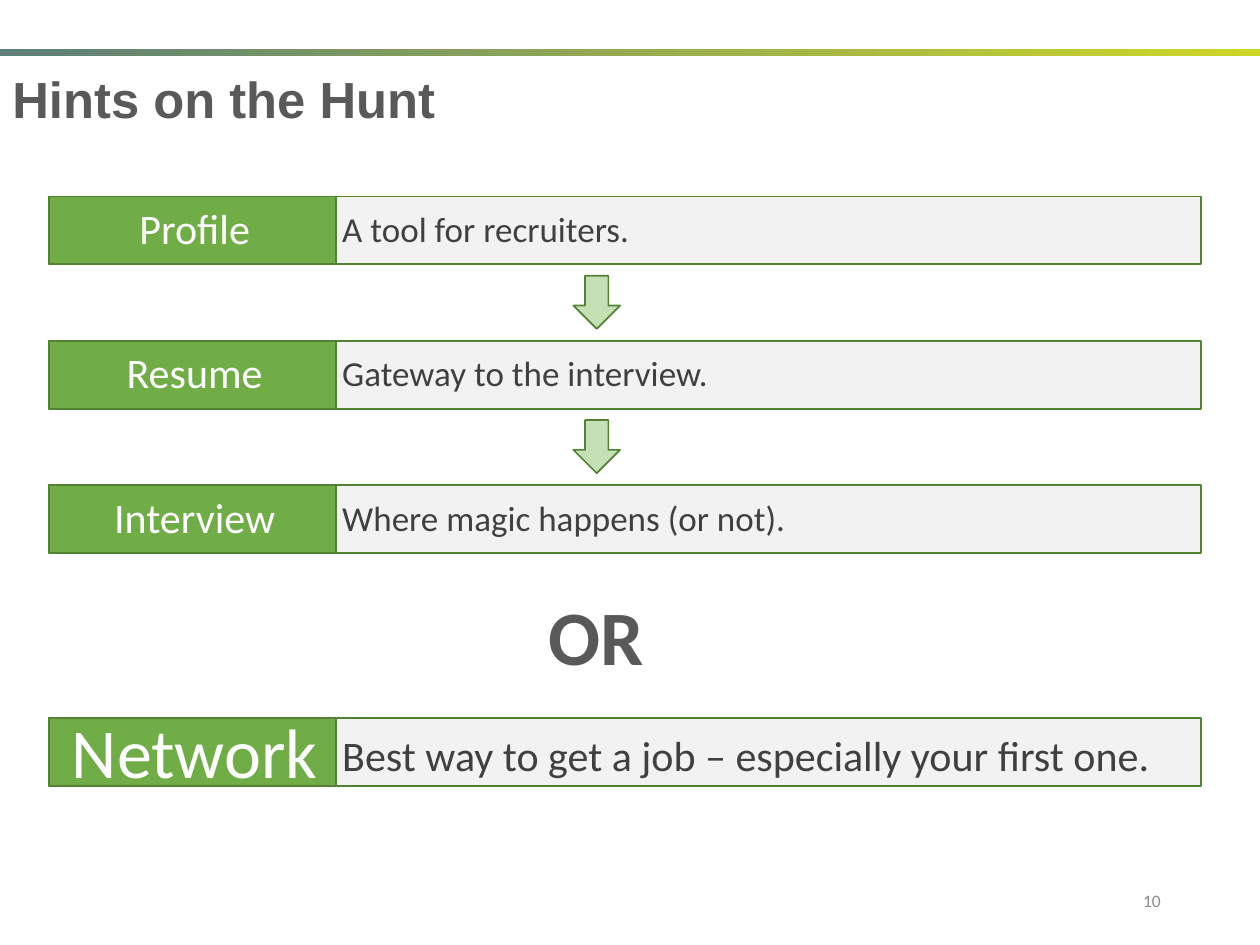
from dataclasses import dataclass

from pptx import Presentation
from pptx import util as u
from pptx.dml import color
from pptx.enum import shapes, text

Cm, Pt = u.Cm, u.Pt
RGB = color.RGBColor.from_string
KIND = shapes.MSO_SHAPE
SIDE = text.PP_ALIGN
MID = text.MSO_ANCHOR.MIDDLE
GROW = text.MSO_AUTO_SIZE.SHAPE_TO_FIT_TEXT


@dataclass(frozen=True)
class Theme:
    head: str = "Arial"
    body: str = "Calibri"
    grey: str = "595959"
    ink: str = "404040"
    pale: str = "F2F2F2"
    green: str = "70AD47"
    mint: str = "C5E0B4"
    edge: str = "548235"
    white: str = "FFFFFF"
    dim: str = "8C8C8C"
    ramp: tuple = ("5D7E79", "CDD728")
    title: int = 29
    label: int = 24
    note: int = 20
    huge: int = 40
    choice: int = 44
    page: int = 10


T = Theme()
LEFT, TOP, STEP = 0.99, 3.96, 2.91
WIDE, HIGH, TAB = 23.22, 1.37, 5.79


def apply(item, form):
    for key, value in form.items():
        setattr(item, key, value)


def add_form(slide, kind, box, fill):
    shape = slide.shapes.add_shape(kind, *map(Cm, box))
    shape.shadow.inherit = False
    shape.fill.solid()
    shape.fill.fore_color.rgb = RGB(fill)
    shape.line.color.rgb = RGB(T.edge)
    shape.line.width = Pt(1)


def add_text(slide, words, box, size, tint, font=T.body, bold=False,
             frame=None, para=None):
    area = slide.shapes.add_textbox(*map(Cm, box)).text_frame
    apply(area, {"word_wrap": True, **(frame or {"auto_size": GROW})})
    line = area.paragraphs[0]
    line.text = words
    apply(line, para or {})
    face = line.runs[0].font
    apply(face, {"name": font, "size": Pt(size), "bold": bold})
    face.color.rgb = RGB(tint)


def add_band(slide):
    band = slide.shapes.add_shape(KIND.RECTANGLE, 0, Cm(0.99), Cm(25.4), Cm(0.15))
    band.shadow.inherit = False
    band.line.fill.background()
    band.fill.gradient()
    band.fill.gradient_angle = 0
    for stop, tint in zip(band.fill.gradient_stops, T.ramp):
        stop.color.rgb = RGB(tint)


def add_row(slide, top, label, note, big=False):
    add_form(slide, KIND.RECTANGLE, (LEFT, top, WIDE, HIGH), T.pale)
    add_form(slide, KIND.RECTANGLE, (LEFT, top, TAB, HIGH), T.green)
    rise, tall, size = (0.33, 1.96, T.huge) if big else (0, 1.27, T.label)
    add_text(slide, label, (1.04, top - rise, 5.77, tall), size, T.white,
             para={"alignment": SIDE.CENTER})
    tall, size = (1.27, T.label) if big else (1.12, T.note)
    add_text(slide, note, (6.65, top + 0.1, 17.5, tall), size, T.ink)


def main():
    deck = Presentation()
    apply(deck, {"slide_width": Cm(25.4), "slide_height": Cm(19.05)})
    slide = deck.slides.add_slide(deck.slide_layouts[6])
    add_band(slide)
    add_text(slide, "Hints on the Hunt", (0, 1.27, 24.03, 1.57), T.title, T.grey,
             font=T.head, bold=True, frame={"vertical_anchor": MID},
             para={"line_spacing": 0.9})
    steps = [
        ("Profile", "A tool for recruiters."),
        ("Resume", "Gateway to the interview."),
        ("Interview", "Where magic happens (or not)."),
    ]
    for rank, (label, note) in enumerate(steps):
        top = TOP + rank * STEP
        add_row(slide, top, label, note)
        if rank < len(steps) - 1:
            add_form(slide, KIND.DOWN_ARROW, (11.56, top + 1.6, 0.94, 1.07), T.mint)
    add_text(slide, "OR", (10.8, 11.73, 2.46, 2.13), T.choice, T.grey, bold=True)
    add_row(slide, 14.48, "Network",
            "Best way to get a job – especially your first one.", big=True)
    add_text(slide, "10", (17.93, 17.65, 5.72, 1.02), T.page, T.dim,
             frame={"vertical_anchor": MID}, para={"alignment": SIDE.RIGHT})
    deck.save("out.pptx")


if __name__ == "__main__":
    main()
